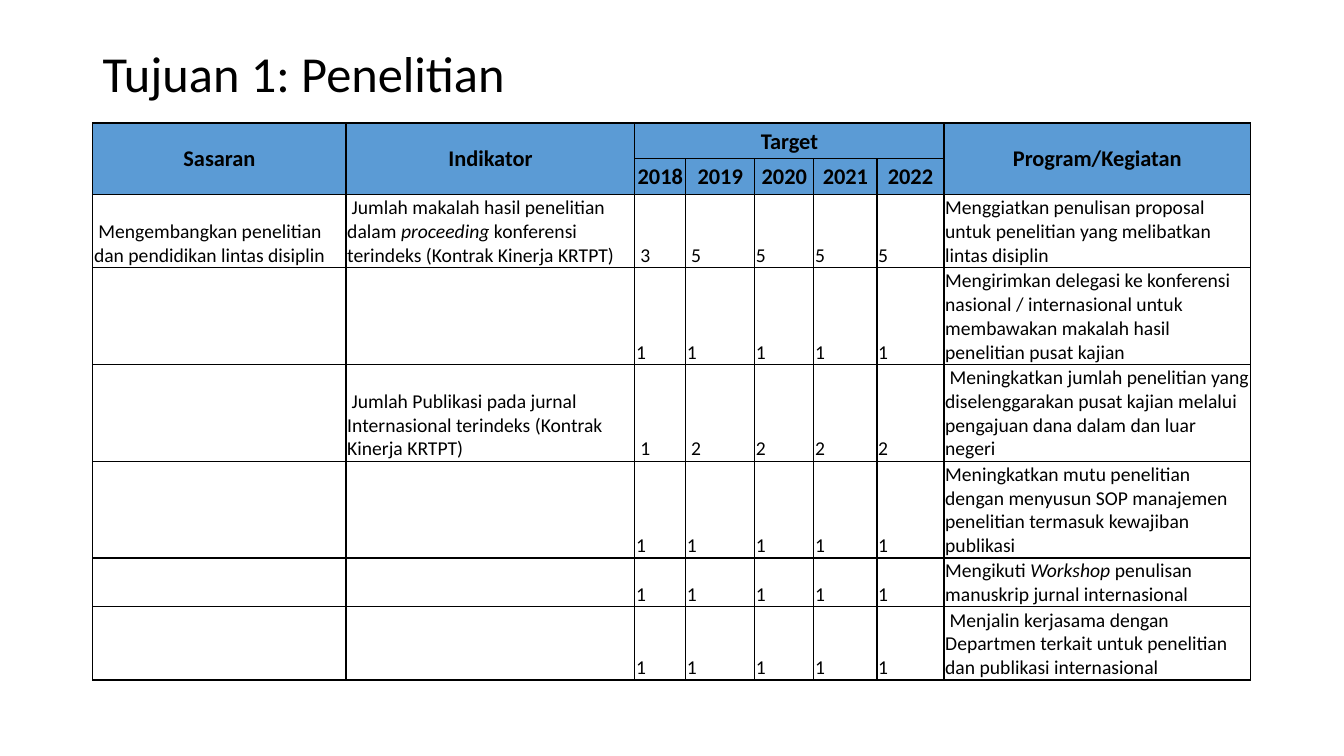
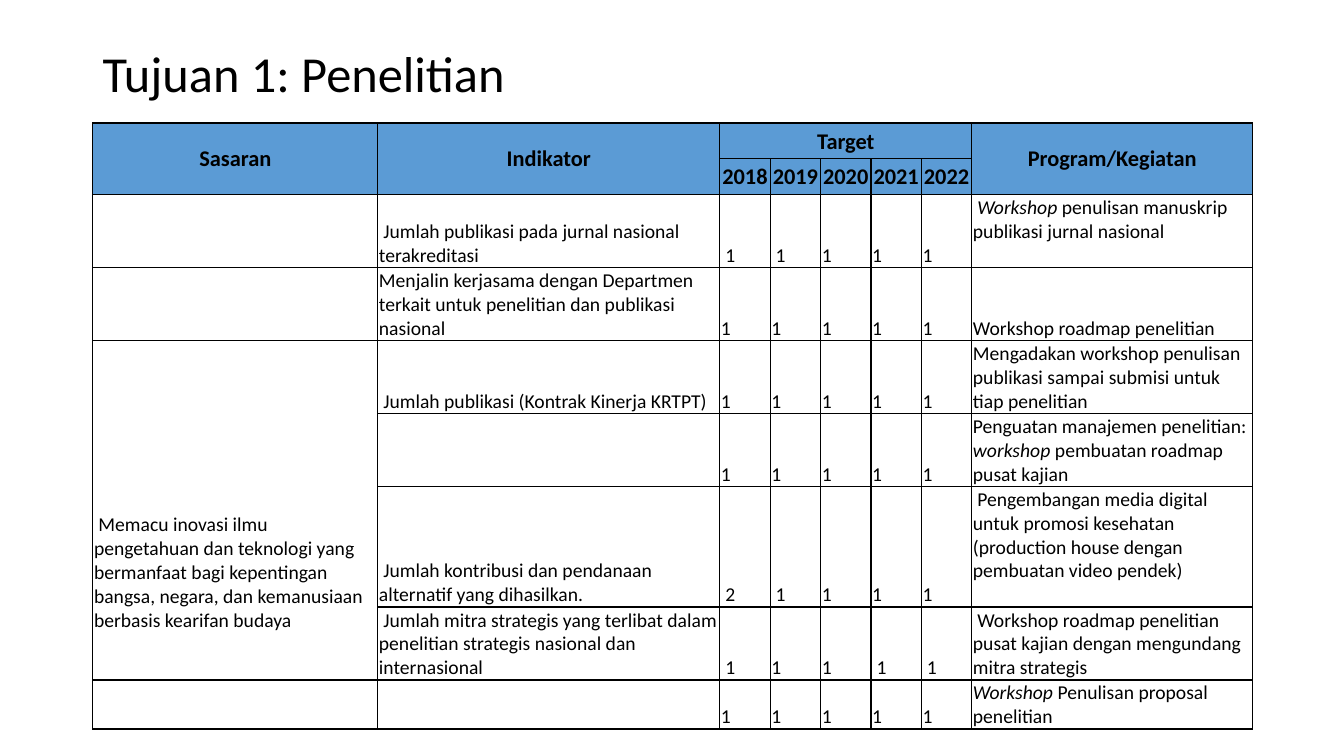
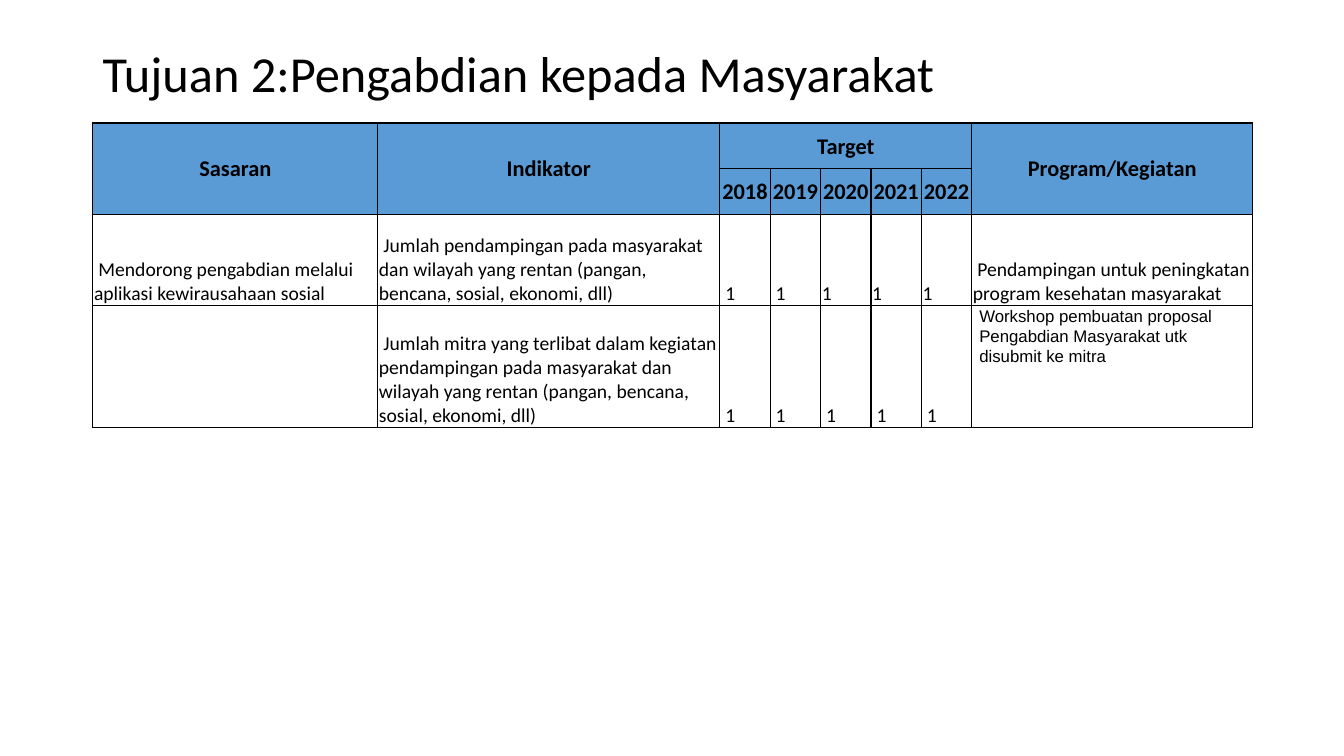
from lxml.etree import SubElement
from pptx import Presentation
from pptx.dml.color import RGBColor
from pptx.enum.text import MSO_ANCHOR, MSO_AUTO_SIZE, PP_ALIGN
from pptx.oxml.ns import qn
from pptx.util import Cm, Pt

COLORS = {"text": "000000", "border": "000000", "header": "5B9BD5"}
FONT = "Calibri"
LINE = 0.6  # height in cm of one line of body text
INDENT = 0.11
TITLE_ONLY = 5
YEARS = ["2018", "2019", "2020", "2021", "2022"]
HEADER_ROWS = 2
LAST_COLUMN = 7
WIDE_COLUMNS = [7.18, 8.62] + [1.27] * 5 + [7.08]

# In the texts below, a leading ">" indents the first line and *...* is italic.
RESEARCH_ROWS = [
    (">Mengembangkan penelitian dan pendidikan lintas disiplin",
     ">Jumlah makalah hasil penelitian dalam *proceeding* konferensi terindeks (Kontrak Kinerja KRTPT)",
     ">3 >5 5 5 5",
     "Menggiatkan penulisan proposal untuk penelitian yang melibatkan lintas disiplin"),
    ("", "", "1 1 1 1 1",
     "Mengirimkan delegasi ke konferensi nasional / internasional untuk membawakan "
     "makalah hasil penelitian pusat kajian"),
    ("", ">Jumlah Publikasi pada jurnal Internasional terindeks (Kontrak Kinerja KRTPT)",
     ">1 >2 2 2 2",
     ">Meningkatkan jumlah penelitian yang diselenggarakan pusat kajian melalui "
     "pengajuan dana dalam dan luar negeri"),
    ("", "", "1 1 1 1 1",
     "Meningkatkan mutu penelitian dengan menyusun SOP manajemen penelitian "
     "termasuk kewajiban publikasi"),
    ("", "", "1 1 1 1 1", "Mengikuti *Workshop* penulisan manuskrip jurnal internasional"),
    ("", "", "1 1 1 1 1",
     ">Menjalin kerjasama dengan Departmen terkait untuk penelitian dan publikasi internasional"),
]

INNOVATION_ROWS = [
    ("", ">Jumlah publikasi pada jurnal nasional terakreditasi", ">1 >1 1 1 1",
     ">*Workshop* penulisan manuskrip publikasi jurnal nasional"),
    ("", "Menjalin kerjasama dengan Departmen terkait untuk penelitian dan publikasi nasional",
     "1 1 1 1 1", "Workshop roadmap penelitian"),
    (">Memacu inovasi ilmu pengetahuan dan teknologi yang bermanfaat bagi kepentingan "
     "bangsa, negara, dan kemanusiaan berbasis kearifan budaya",
     ">Jumlah publikasi (Kontrak Kinerja KRTPT)", "1 1 1 1 1",
     "Mengadakan workshop penulisan publikasi sampai submisi untuk tiap penelitian"),
    ("", "", "1 1 1 1 1",
     "Penguatan manajemen penelitian: *workshop* pembuatan roadmap pusat kajian"),
    ("", ">Jumlah kontribusi dan pendanaan alternatif yang dihasilkan.", ">2 >1 1 1 1",
     ">Pengembangan media digital untuk promosi kesehatan (production house dengan "
     "pembuatan video pendek)"),
    ("", ">Jumlah mitra strategis yang terlibat dalam penelitian strategis nasional dan internasional",
     ">1 1 1 >1 >1",
     ">Workshop roadmap penelitian pusat kajian dengan mengundang mitra strategis"),
    ("", "", "1 1 1 1 1", "*Workshop* Penulisan proposal penelitian"),
]

SERVICE_ROWS = [
    (">Mendorong pengabdian melalui aplikasi kewirausahaan sosial",
     ">Jumlah pendampingan pada masyarakat dan wilayah yang rentan (pangan, bencana, "
     "sosial, ekonomi, dll)",
     ">1 >1 1 1 1", ">Pendampingan untuk peningkatan program kesehatan masyarakat"),
    ("",
     ">Jumlah mitra yang terlibat dalam kegiatan pendampingan pada masyarakat dan "
     "wilayah yang rentan (pangan, bencana, sosial, ekonomi, dll)",
     ">1 >1 >1 >1 >1", ""),
]
PROPOSAL_WORKSHOP = "Workshop pembuatan proposal Pengabdian Masyarakat utk disubmit ke mitra"


def style_font(font, size, name=FONT, bold=False, italic=False):
    font.name = name
    font.size = Pt(size)
    font.bold = bold
    font.italic = italic
    font.color.rgb = RGBColor.from_string(COLORS["text"])


def write_text(paragraph, text, size, name=FONT, bold=False):
    """Write marked text: a leading > indents the first line, *...* is italic."""
    if text.startswith(">"):
        paragraph._p.get_or_add_pPr().set("indent", str(Cm(INDENT)))
        text = text[1:]
    for index, part in enumerate(text.split("*")):
        if part:
            span = paragraph.add_run()
            span.text = part
            style_font(span.font, size, name, bold, italic=index % 2 == 1)


def add_page(deck, title):
    page = deck.slides.add_slide(deck.slide_layouts[TITLE_ONLY])
    box = page.shapes.title
    box.left, box.top, box.width, box.height = Cm(2.33), Cm(1.02), Cm(29.21), Cm(1.8)
    frame = box.text_frame
    frame.auto_size = MSO_AUTO_SIZE.NONE
    frame.vertical_anchor = MSO_ANCHOR.MIDDLE
    paragraph = frame.paragraphs[0]
    paragraph.alignment = PP_ALIGN.LEFT
    paragraph.line_spacing = 0.9
    write_text(paragraph, title, 36)
    return page


def set_borders(cell):
    properties = cell._tc.get_or_add_tcPr()
    for side in ("lnL", "lnR", "lnT", "lnB"):
        line = SubElement(properties, qn(f"a:{side}"), w=str(Pt(1)))
        fill = SubElement(line, qn("a:solidFill"))
        SubElement(fill, qn("a:srgbClr"), val=COLORS["border"])


def format_cell(cell, is_header):
    set_borders(cell)
    cell.margin_left = cell.margin_right = cell.margin_top = Cm(0.03)
    cell.margin_bottom = 0
    if is_header:
        cell.vertical_anchor = MSO_ANCHOR.MIDDLE
        cell.fill.solid()
        cell.fill.fore_color.rgb = RGBColor.from_string(COLORS["header"])
    else:
        cell.vertical_anchor = MSO_ANCHOR.BOTTOM
        cell.fill.background()


def fill_header(table):
    for column in (0, 1, LAST_COLUMN):
        table.cell(0, column).merge(table.cell(1, column))
    table.cell(0, 2).merge(table.cell(0, 6))
    labels = {(0, 0): "Sasaran", (0, 1): "Indikator", (0, 2): "Target",
              (0, LAST_COLUMN): "Program/Kegiatan"}
    labels.update({(1, column): year for column, year in enumerate(YEARS, 2)})
    for (row, column), label in labels.items():
        paragraph = table.cell(row, column).text_frame.paragraphs[0]
        paragraph.alignment = PP_ALIGN.CENTER
        write_text(paragraph, label, 16, bold=True)


def add_target_table(page, rows, widths, heights):
    frame = page.shapes.add_table(len(heights), len(widths), Cm(2.34), Cm(3.1),
                                  Cm(sum(widths)), Cm(sum(heights)))
    table = frame.table
    table.first_row = table.horz_banding = False
    for column, width in zip(table.columns, widths):
        column.width = Cm(width)
    for index, (row, height) in enumerate(zip(table.rows, heights)):
        row.height = Cm(height)
        for cell in row.cells:
            format_cell(cell, index < HEADER_ROWS)
    fill_header(table)
    for index, (goal, indicator, targets, program) in enumerate(rows, HEADER_ROWS):
        texts = [goal, indicator, *targets.split(), program]
        for column, text in enumerate(texts):
            write_text(table.cell(index, column).text_frame.paragraphs[0], text, 14)
    return table


def leave_lines_below(cell, count):
    cell.margin_bottom = Cm(count * LINE)


def add_proposal_workshop(cell):
    cell.vertical_anchor = MSO_ANCHOR.TOP
    cell.margin_left = cell.margin_right = Cm(0.19)
    cell.margin_top = 0
    paragraph = cell.text_frame.paragraphs[0]
    paragraph.line_spacing = 1.07
    paragraph.space_after = Pt(8)
    write_text(paragraph, PROPOSAL_WORKSHOP, 12, name="Arial")


def main():
    deck = Presentation()
    deck.slide_width, deck.slide_height = Cm(33.87), Cm(19.05)

    page = add_page(deck, "Tujuan 1: Penelitian")
    add_target_table(page, RESEARCH_ROWS,
                     [6.38, 7.28, 1.28, 1.74, 1.49, 1.59, 1.69, 7.73],
                     [0.9, 0.9, 1.84, 2.44, 2.44, 2.44, 1.23, 1.84])

    page = add_page(deck, "Tujuan 1: Penelitian")
    table = add_target_table(page, INNOVATION_ROWS, WIDE_COLUMNS,
                             [0.9, 0.9, 1.84, 1.84, 1.84, 1.84, 3.03, 1.84, 1.23])
    table.cell(4, 0).merge(table.cell(7, 0))
    leave_lines_below(table.cell(4, 0), 2)
    for row in (2, 6):
        leave_lines_below(table.cell(row, LAST_COLUMN), 1)

    page = add_page(deck, "Tujuan 2:Pengabdian kepada Masyarakat")
    table = add_target_table(page, SERVICE_ROWS, WIDE_COLUMNS, [1.15, 1.15, 2.31, 3.06])
    add_proposal_workshop(table.cell(3, LAST_COLUMN))

    deck.save("out.pptx")


if __name__ == "__main__":
    main()
